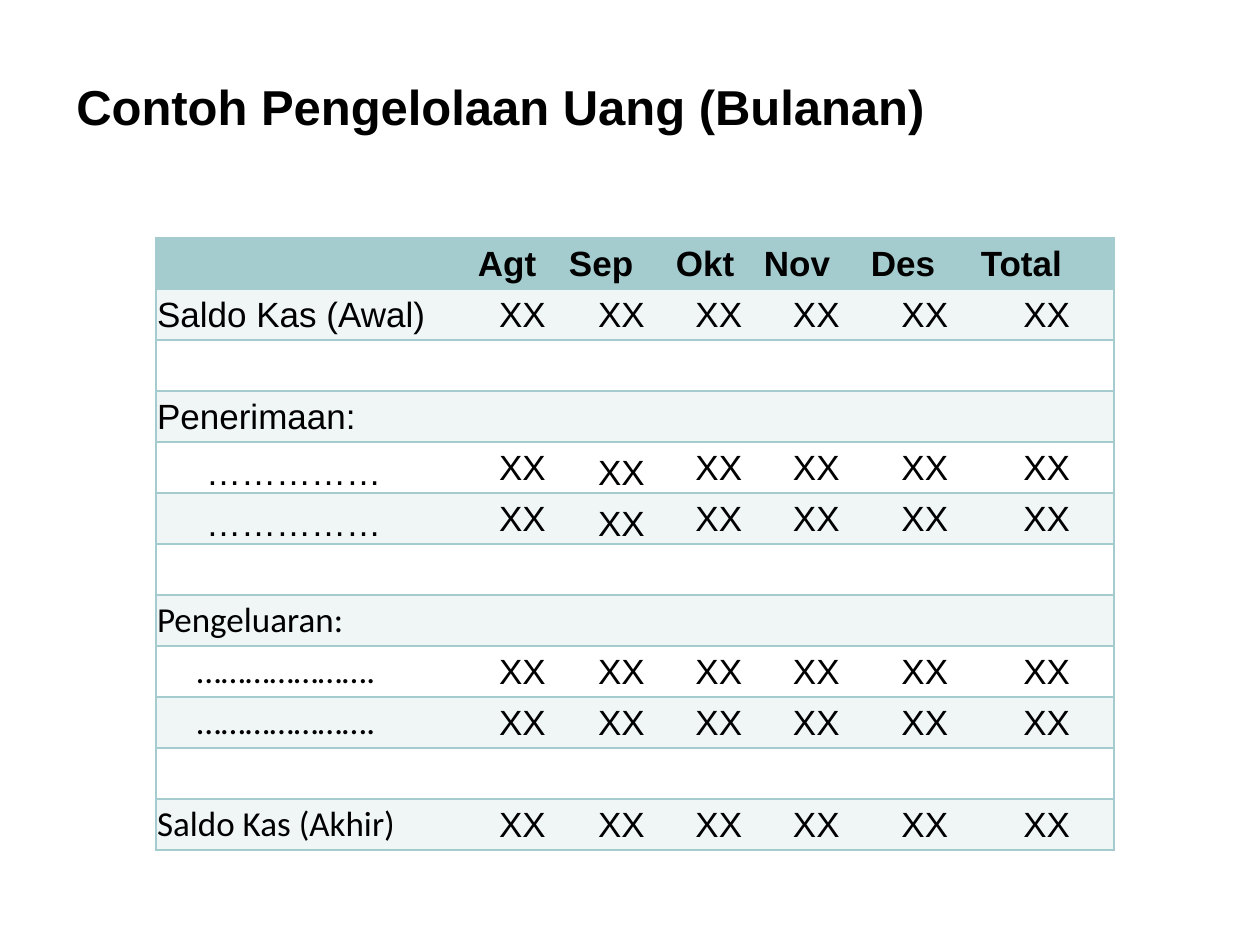
from lxml.etree import SubElement
from pptx import Presentation
from pptx.dml.color import RGBColor
from pptx.enum.text import MSO_ANCHOR as Anchor, PP_ALIGN as Align
from pptx.oxml.ns import qn
from pptx.util import Pt

PX = 914400 // 126
TEAL, PALE, WHITE, BLACK = "A4CBCE", "F0F6F6", "FFFFFF", "000000"
COLUMNS = [321, 91, 107, 88, 107, 110, 134]
ROW_HEIGHT = 51
MONTHS = ["Agt", "Sep", "Okt", "Nov", "Des", "Total"]
AMOUNTS = ["XX"] * len(MONTHS)
NONE = [""] * len(MONTHS)
ARIAL_DOTS = ("……………", "Arial", 49, AMOUNTS)
CALIBRI_DOTS = ("………………….", "Calibri", 40, AMOUNTS)
SPACER = ("", "Arial", 0, NONE)
# label, label font, label indent, values
ROWS = [
    ("", "Arial", 0, MONTHS),
    ("Saldo Kas (Awal)", "Arial", 0, AMOUNTS),
    SPACER,
    ("Penerimaan:", "Arial", 0, NONE),
    ARIAL_DOTS,
    ARIAL_DOTS,
    SPACER,
    ("Pengeluaran:", "Calibri", 0, NONE),
    CALIBRI_DOTS,
    CALIBRI_DOTS,
    SPACER,
    ("Saldo Kas (Akhir)", "Calibri", 0, AMOUNTS),
]


def color(value):
    return RGBColor.from_string(value)


def apply(target, values):
    for name, value in values.items():
        setattr(target, name, value)


def write(para, text, size, font="Arial", bold=False):
    span = para.add_run()
    span.text = text
    apply(span.font, {"name": font, "size": Pt(size), "bold": bold})
    span.font.color.rgb = color(BLACK)


def add_title(slide, left, top, width, height):
    box = slide.shapes.add_textbox(left * PX, top * PX, width * PX, height * PX)
    apply(box.text_frame, {"word_wrap": True, "vertical_anchor": Anchor.BOTTOM})
    write(box.text_frame.paragraphs[0], "Contoh Pengelolaan Uang (Bulanan)", 28, bold=True)


def draw_borders(cell, is_first, is_last):
    """Rule every row, and close the table at its two outer sides."""
    sides = {"lnL": is_first, "lnR": is_last, "lnT": True, "lnB": True}
    for side, visible in sides.items():
        line = SubElement(cell._tc.get_or_add_tcPr(), qn(f"a:{side}"), w=str(Pt(1)))
        if visible:
            fill = SubElement(line, qn("a:solidFill"))
            SubElement(fill, qn("a:srgbClr"), val=TEAL)
        else:
            SubElement(line, qn("a:noFill"))


def add_cash_table(slide, left, top):
    frame = slide.shapes.add_table(len(ROWS), len(COLUMNS), left * PX, top * PX,
                                   sum(COLUMNS) * PX, len(ROWS) * ROW_HEIGHT * PX)
    table = frame.table
    apply(table, {"first_row": False, "horz_banding": False})
    for column, width in zip(table.columns, COLUMNS):
        column.width = width * PX
    for row_no, (label, label_font, indent, values) in enumerate(ROWS):
        table.rows[row_no].height = ROW_HEIGHT * PX
        is_header = row_no == 0
        background = TEAL if is_header else PALE if row_no % 2 else WHITE
        for col_no, text in enumerate([label, *values]):
            cell = table.cell(row_no, col_no)
            is_label = col_no == 0
            draw_borders(cell, is_label, col_no == len(COLUMNS) - 1)
            cell.fill.solid()
            cell.fill.fore_color.rgb = color(background)
            is_low = ROWS[row_no] is ARIAL_DOTS and col_no in (0, 2)
            apply(cell, {"margin_left": PX, "margin_right": PX, "margin_top": PX,
                         "margin_bottom": 0,
                         "vertical_anchor": Anchor.BOTTOM if is_low else Anchor.MIDDLE})
            if not text:
                continue
            para = cell.text_frame.paragraphs[0]
            para.alignment = Align.LEFT if is_label or is_header else Align.CENTER
            if is_label and indent:
                para._p.get_or_add_pPr().set("marL", str(indent * PX))
            write(para, text, 20, label_font if is_label else "Arial", is_header)


def main():
    deck = Presentation()
    apply(deck, {"slide_width": 1260 * PX, "slide_height": 945 * PX})
    page = deck.slides.add_slide(deck.slide_layouts[6])
    add_title(page, 64, 32, 1142, 110)
    add_cash_table(page, 156, 238)
    deck.save("out.pptx")


if __name__ == "__main__":
    main()
